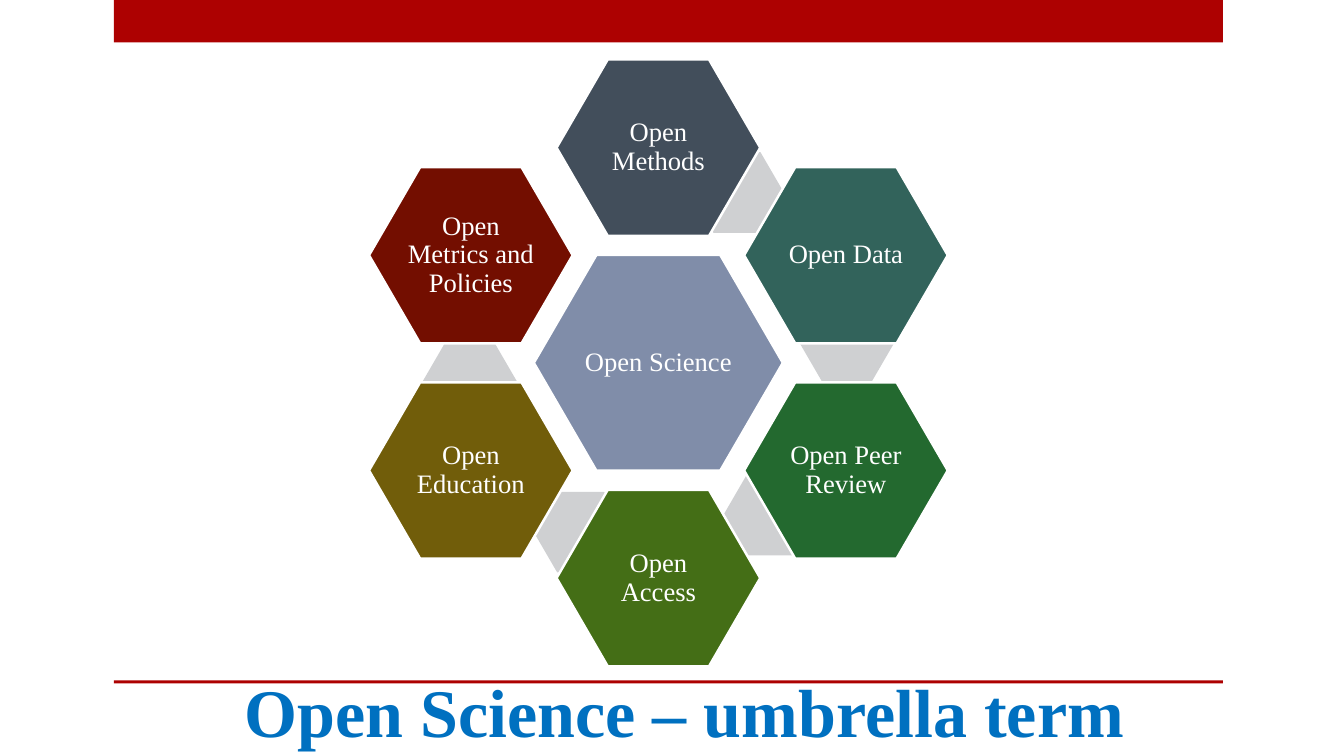
import pptx
import pptx.dml.color
import pptx.enum.shapes
import pptx.enum.text
import pptx.util

Inches = pptx.util.Inches
Shape = pptx.enum.shapes.MSO_SHAPE
Anchor = pptx.enum.text.MSO_ANCHOR

RED = "AD0101"
WHITE = "FFFFFF"
GREY = "CFD0D2"

# Label, fill, column and row of each petal, clockwise from the top
PETALS = [
    ("Open Methods", "424E5B", 0, -2),
    ("Open Data", "32635B", 1, -1),
    ("Open Peer Review", "23692F", 1, 1),
    ("Open Access", "446E16", 0, 2),
    ("Open Education", "715D0A", -1, 1),
    ("Open Metrics and Policies", "730E00", -1, -1),
]
# Centre of the grey link behind each petal, from the middle of the diagram
LINKS = [(0.78, -1.69), (1.87, -0.19), (1.11, 1.51), (-0.77, 1.68), (-1.87, 0.18)]


def rgb(color):
    return pptx.dml.color.RGBColor.from_string(color)


def write_text(tf, text, size, color, bold=False, anchor=Anchor.MIDDLE,
               spacing=None, inset=None):
    tf.word_wrap = True
    tf.auto_size = pptx.enum.text.MSO_AUTO_SIZE.NONE
    tf.vertical_anchor = anchor
    if inset is not None:
        tf.margin_left = tf.margin_right = Inches(inset)
        tf.margin_top = tf.margin_bottom = Inches(inset)
    p = tf.paragraphs[0]
    p.alignment = pptx.enum.text.PP_ALIGN.CENTER
    p.line_spacing = spacing
    r = p.add_run()
    r.text = text
    r.font.name = "Times New Roman"
    r.font.size = pptx.util.Pt(size)
    r.font.bold = bold
    r.font.color.rgb = rgb(color)


def add_filled(shapes, kind, left, top, width, height, fill):
    sp = shapes.add_shape(kind, Inches(left), Inches(top), Inches(width), Inches(height))
    sp.shadow.inherit = False
    sp.fill.solid()
    sp.fill.fore_color.rgb = rgb(fill)
    sp.line.fill.background()
    return sp


def add_hexagon(shapes, cx, cy, width, height, fill, label=None):
    """Centre a hexagon on (cx, cy); a labelled one gets a white outline."""
    sp = add_filled(shapes, Shape.HEXAGON, cx - width / 2, cy - height / 2,
                    width, height, fill)
    sp.adjustments[0] = 0.29
    if label:
        sp.line.color.rgb = rgb(WHITE)
        sp.line.width = pptx.util.Pt(1.75)
        write_text(sp.text_frame, label, 19, WHITE, spacing=0.9, inset=0.03)


def add_bars(s, left, width):
    for top, height in ((0, 0.42), (6.75, 0.03)):
        add_filled(s.shapes, Shape.RECTANGLE, left, top, width, height, RED)


def add_title(s, left, top, width, height):
    title = s.shapes.title
    title.left, title.top = Inches(left), Inches(top)
    title.width, title.height = Inches(width), Inches(height)
    write_text(title.text_frame, "Open Science – umbrella term", 48.6, "0070C0",
               bold=True, anchor=Anchor.BOTTOM)


def add_flower(s, left, top, width, height):
    """Ring six petals around a core, filling the given box."""
    petal_w, petal_h = 2.02, 1.75
    cx, cy = left + width / 2, top + height / 2
    col_step, row_step = (width - petal_w) / 2, (height - petal_h) / 4
    shapes = s.shapes.add_group_shape().shapes
    add_hexagon(shapes, cx, cy, 2.47, 2.14, "808DA9", "Open Science")
    for dx, dy in LINKS:
        add_hexagon(shapes, cx + dx, cy + dy, 0.93, 0.8, GREY)
    for label, fill, col, row in PETALS:
        add_hexagon(shapes, cx + col * col_step, cy + row * row_step,
                    petal_w, petal_h, fill, label)


def main():
    prs = pptx.Presentation()
    prs.slide_width, prs.slide_height = Inches(13.33), Inches(7.5)
    s = prs.slides.add_slide(prs.slide_layouts[5])
    add_bars(s, 1.13, 11)
    add_title(s, 0.33, 6.54, 12.92, 0.96)
    add_flower(s, 3.66, 0.59, 5.74, 6.02)
    prs.save("out.pptx")


if __name__ == "__main__":
    main()
